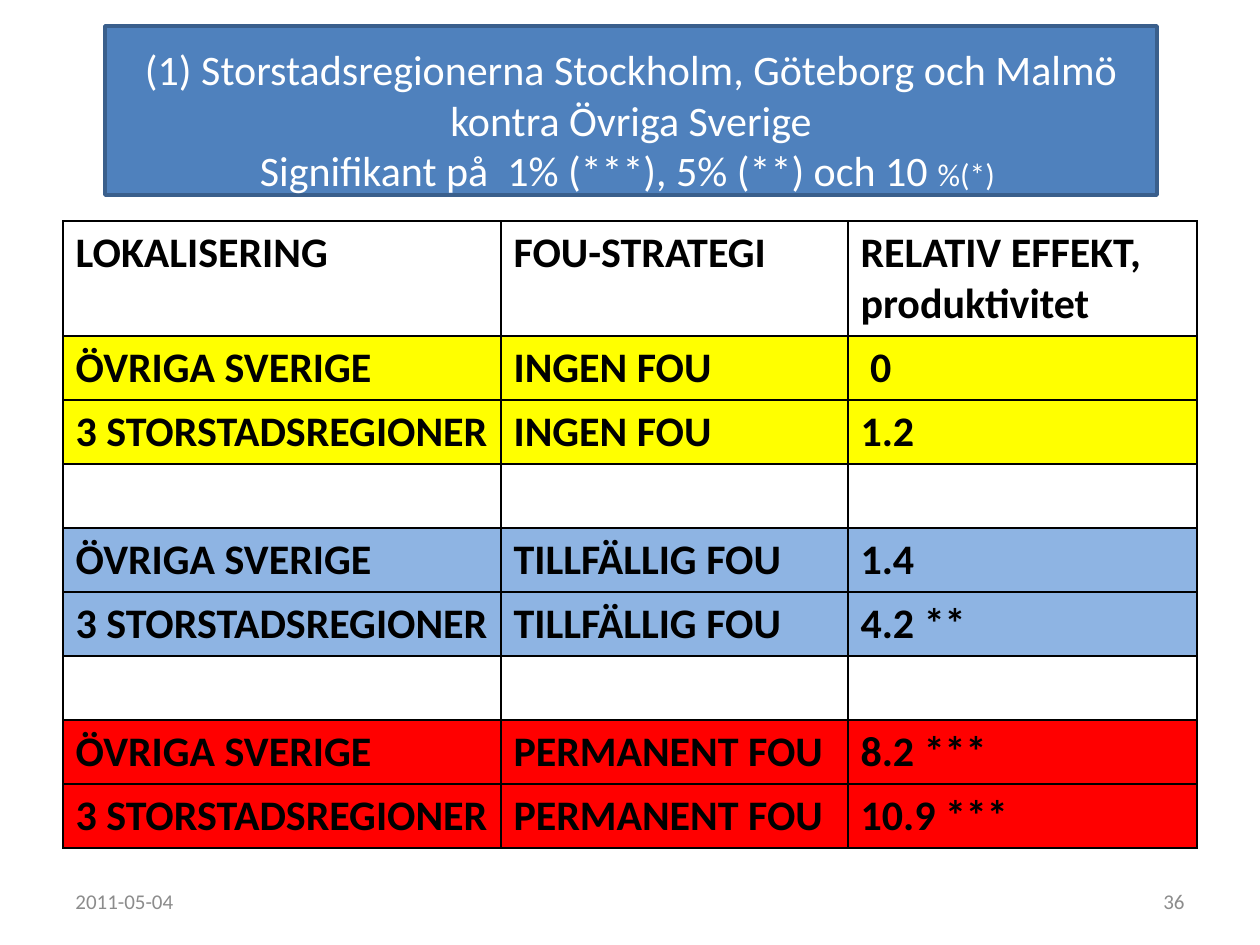
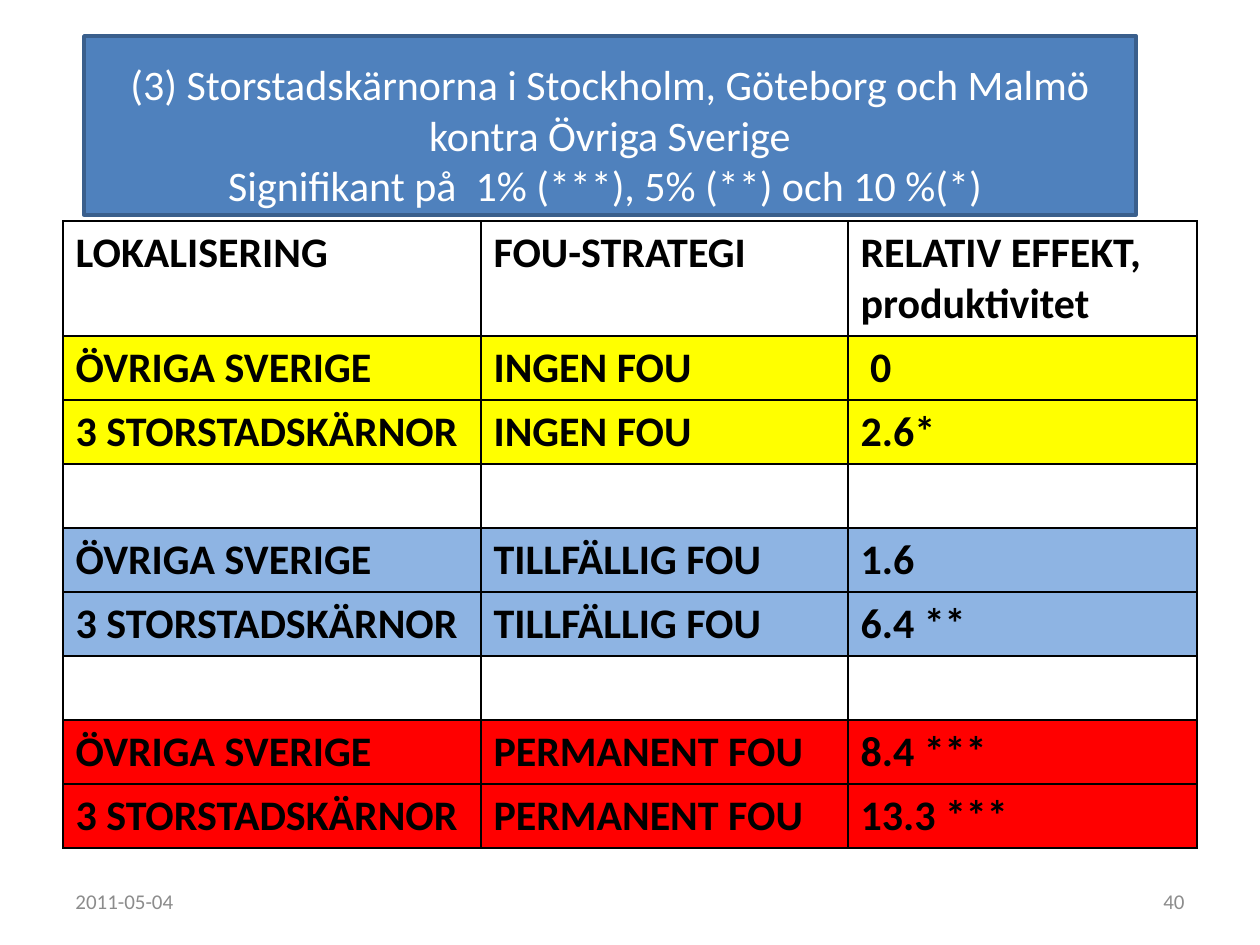
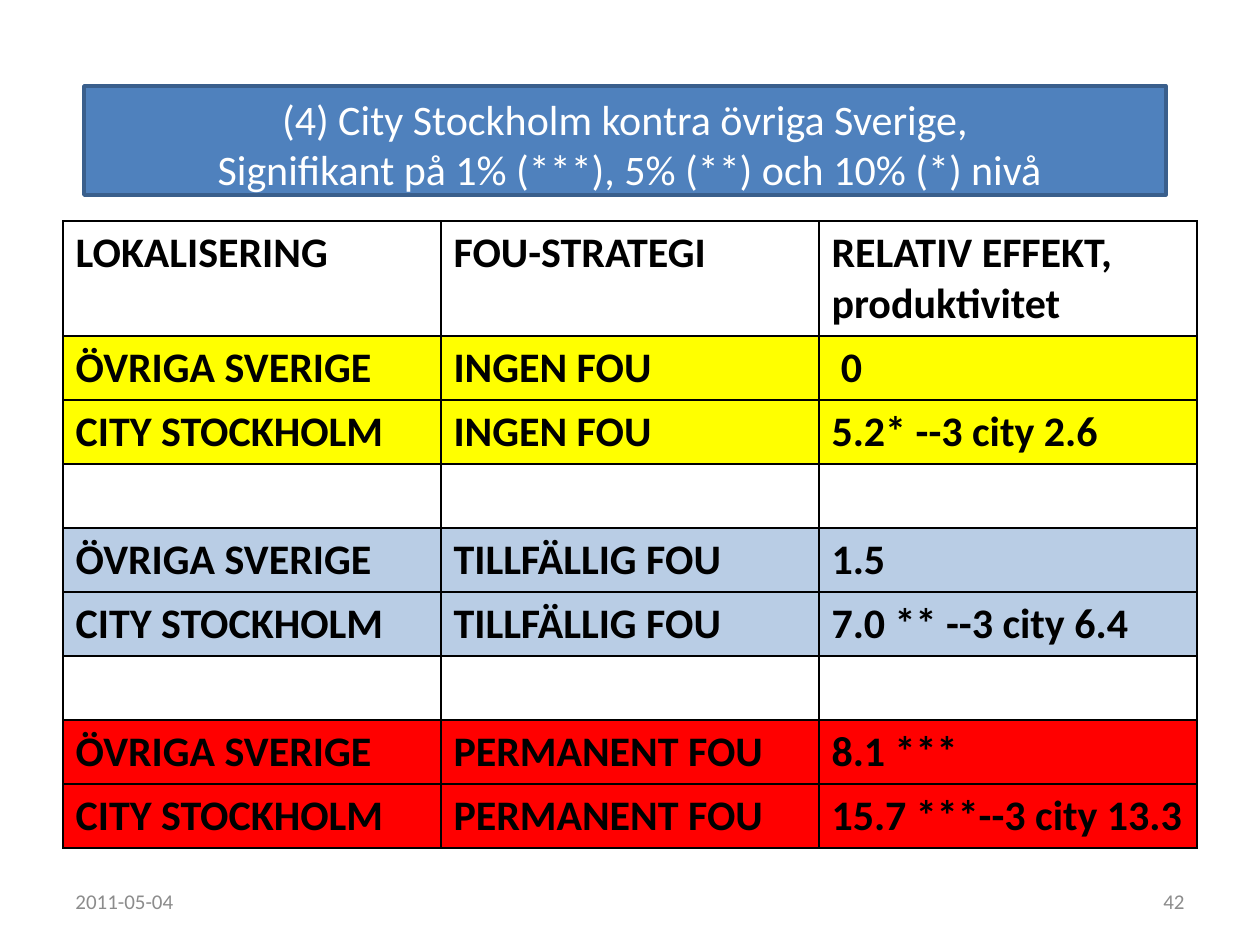
"""Build three slides on R&D strategy and productivity by location."""
import lxml.etree
import pptx
import pptx.dml.color
import pptx.enum.shapes
import pptx.enum.text
import pptx.oxml.ns
import pptx.util

PX = 914400 // 126
FONT = "Calibri"
BLACK, WHITE, GREY = "000000", "FFFFFF", "8C8C8C"
BAND, BAND_EDGE = "4F81BD", "3A5F8C"
YELLOW, BLUE, PALE_BLUE, RED = "FFFF00", "8EB4E3", "B9CDE5", "FF0000"
ALIGN = pptx.enum.text.PP_ALIGN
ANCHOR = pptx.enum.text.MSO_ANCHOR

DATE = "2011-05-04"
HEADINGS = ("LOKALISERING", "FOU-STRATEGI", "RELATIV EFFEKT, produktivitet")
STRATEGIES = ("INGEN FOU", "TILLFÄLLIG FOU", "PERMANENT FOU")
REST = "ÖVRIGA SVERIGE"

SLIDES = [
    {
        "title": [
            [("(1) Storstadsregionerna Stockholm, Göteborg och Malmö kontra Övriga Sverige", 24)],
            [("Signifikant på  1% (***), 5% (**) och 10 ", 24), ("%(*) ", 18)],
        ],
        "band": (105, 26, 1052, 169),
        "foot": 0,
        "region": "3 STORSTADSREGIONER",
        "effects": [(" 0", "1.2"), ("1.4", "4.2 **"), ("8.2 ***", "10.9 ***")],
        "tints": (YELLOW, BLUE, RED),
        "columns": (438, 347, 349),
        "number": "36",
    },
    {
        "title": [
            [("(3) Storstadskärnorna i Stockholm, Göteborg och Malmö kontra Övriga Sverige", 24)],
            [("Signifikant på  1% (***), 5% (**) och 10 %(*) ", 24)],
        ],
        "band": (84, 36, 1052, 179),
        "foot": 5,
        "region": "3 STORSTADSKÄRNOR",
        "effects": [(" 0", "2.6*"), ("1.6", "6.4 **"), ("8.4 ***", "13.3 ***")],
        "tints": (YELLOW, BLUE, RED),
        "columns": (418, 367, 349),
        "number": "40",
    },
    {
        "title": [
            [("(4) City Stockholm kontra övriga Sverige,", 24)],
            [(" Signifikant på 1% (***), 5% (**) och 10% (*) nivå", 24)],
        ],
        "band": (84, 86, 1082, 109),
        "foot": 1,
        "region": "CITY STOCKHOLM",
        "effects": [(" 0", "5.2* --3 city 2.6"), ("1.5", "7.0 ** --3 city 6.4"),
                    ("8.1 ***", "15.7 ***--3 city 13.3")],
        "tints": (YELLOW, PALE_BLUE, RED),
        "columns": (378, 378, 378),
        "number": "42",
    },
]

TABLE_LEFT, TABLE_TOP, TABLE_WIDTH = 63, 221, 1134
HEAD_HEIGHT, ROW_HEIGHT = 115, 64
FOOTER_TOP, FOOTER_WIDTH, FOOTER_HEIGHT = 876, 294, 50


def box(*lengths):
    return [length * PX for length in lengths]


def color(value):
    return pptx.dml.color.RGBColor.from_string(value)


def apply(target, values):
    for key, value in values.items():
        setattr(target, key, value)


def write(paragraph, words, size, tint, bold=False):
    run = paragraph.add_run()
    run.text = words
    apply(run.font, {"name": FONT, "size": pptx.util.Pt(size), "bold": bold})
    run.font.color.rgb = color(tint)


def add_title(slide, content):
    band = slide.shapes.add_shape(pptx.enum.shapes.MSO_SHAPE.RECTANGLE, *box(*content["band"]))
    band.shadow.inherit = False
    band.fill.solid()
    band.fill.fore_color.rgb = color(BAND)
    band.line.color.rgb = color(BAND_EDGE)
    band.line.width = pptx.util.Pt(2)
    frame = band.text_frame
    apply(frame, {"word_wrap": True, "vertical_anchor": ANCHOR.BOTTOM,
                  "margin_top": 0, "margin_bottom": content["foot"] * PX})
    for index, line in enumerate(content["title"]):
        paragraph = frame.add_paragraph() if index else frame.paragraphs[0]
        paragraph.alignment = ALIGN.CENTER
        for words, size in line:
            write(paragraph, words, size, WHITE)


def add_borders(cell):
    properties = cell._tc.get_or_add_tcPr()
    qn = pptx.oxml.ns.qn
    for side in ("lnL", "lnR", "lnT", "lnB"):
        border = lxml.etree.SubElement(properties, qn(f"a:{side}"), w="12700")
        paint = lxml.etree.SubElement(border, qn("a:solidFill"))
        lxml.etree.SubElement(paint, qn("a:srgbClr"), val=BLACK)


def table_rows(content):
    rows = [(HEADINGS, None)]
    for strategy, effects, tint in zip(STRATEGIES, content["effects"], content["tints"]):
        if len(rows) > 1:
            rows.append((("", "", ""), None))
        for place, effect in zip((REST, content["region"]), effects):
            rows.append(((place, strategy, effect), tint))
    return rows


def add_effects(slide, content):
    rows = table_rows(content)
    height = HEAD_HEIGHT + ROW_HEIGHT * (len(rows) - 1)
    effects = slide.shapes.add_table(
        len(rows), len(HEADINGS), *box(TABLE_LEFT, TABLE_TOP, TABLE_WIDTH, height)).table
    apply(effects, {"first_row": False, "horz_banding": False})
    for column, width in zip(effects.columns, content["columns"]):
        column.width = width * PX
    for index, (entries, tint) in enumerate(rows):
        effects.rows[index].height = (ROW_HEIGHT if index else HEAD_HEIGHT) * PX
        for cell, words in zip(effects.rows[index].cells, entries):
            add_borders(cell)
            if tint:
                cell.fill.solid()
                cell.fill.fore_color.rgb = color(tint)
            else:
                cell.fill.background()
            if words:
                write(cell.text_frame.paragraphs[0], words, 24, BLACK, True)


def add_footer(slide, number):
    right = TABLE_LEFT + TABLE_WIDTH - FOOTER_WIDTH
    for left, words, alignment in ((TABLE_LEFT, DATE, ALIGN.LEFT), (right, number, ALIGN.RIGHT)):
        footer = slide.shapes.add_textbox(*box(left, FOOTER_TOP, FOOTER_WIDTH, FOOTER_HEIGHT))
        frame = footer.text_frame
        apply(frame, {"word_wrap": True, "vertical_anchor": ANCHOR.MIDDLE})
        frame.paragraphs[0].alignment = alignment
        write(frame.paragraphs[0], words, 12, GREY)


def main():
    deck = pptx.Presentation()
    apply(deck, {"slide_width": 1260 * PX, "slide_height": 945 * PX})
    for content in SLIDES:
        slide = deck.slides.add_slide(deck.slide_layouts[6])
        add_effects(slide, content)
        add_footer(slide, content["number"])
        add_title(slide, content)
    deck.save("out.pptx")


if __name__ == "__main__":
    main()
